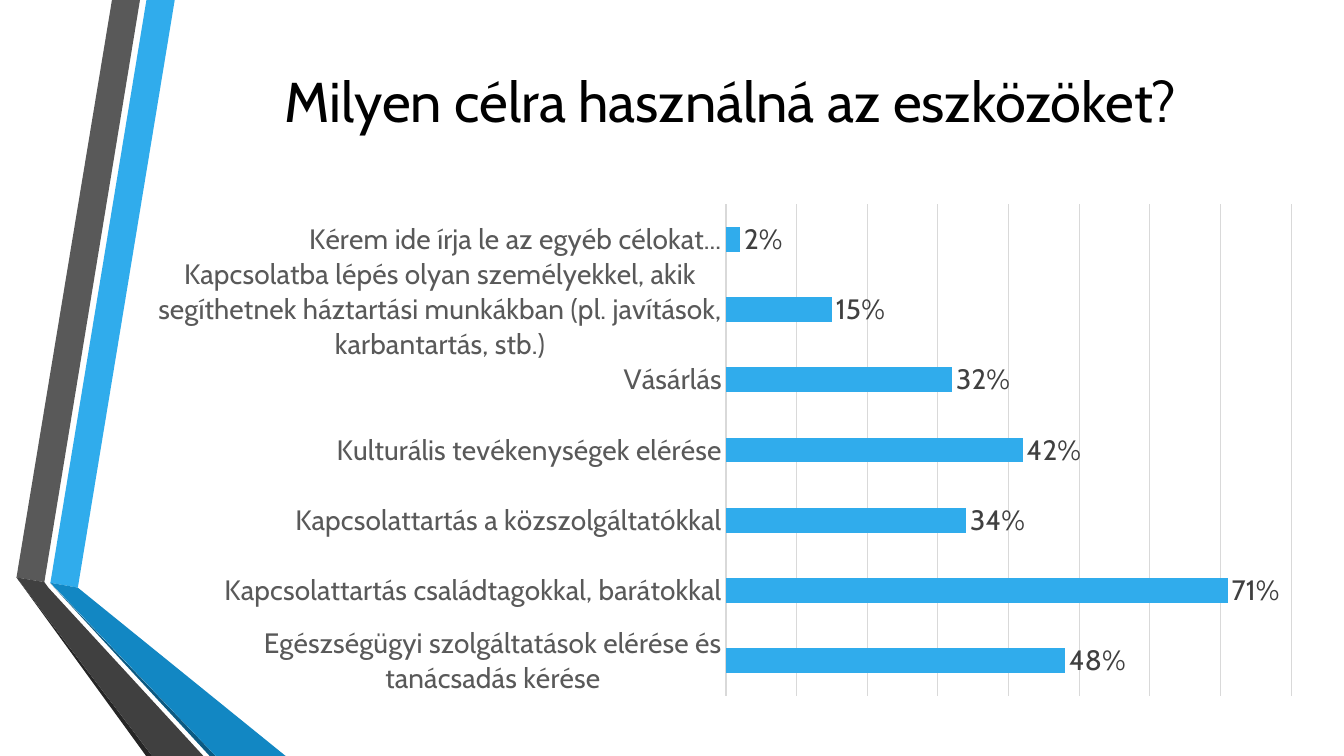
from lxml import etree
from pptx import Presentation
from pptx.chart.data import CategoryChartData as ChartData
from pptx.dml.color import RGBColor as Color
from pptx.enum.chart import XL_CHART_TYPE as ChartType
from pptx.enum.chart import XL_LABEL_POSITION as LabelPosition
from pptx.enum.chart import XL_TICK_LABEL_POSITION as TickLabels
from pptx.enum.chart import XL_TICK_MARK as TickMark
from pptx.enum.text import MSO_ANCHOR as Anchor
from pptx.enum.text import PP_ALIGN as Align
from pptx.oxml.ns import qn
from pptx.util import Pt

# Content
TITLE = "Milyen célra használná az eszközöket?"
PURPOSES = [
    ("Egészségügyi szolgáltatások elérése és tanácsadás kérése", 0.48),
    ("Kapcsolattartás családtagokkal, barátokkal", 0.71),
    ("Kapcsolattartás a közszolgáltatókkal", 0.34),
    ("Kulturális tevékenységek elérése", 0.42),
    ("Vásárlás", 0.32),
    ("Kapcsolatba lépés olyan személyekkel, akik segíthetnek háztartási "
     "munkákban (pl. javítások, karbantartás, stb.)", 0.15),
    ("Kérem ide írja le az egyéb célokat...", 0.02),
]


class Theme:
    font = "Cabin"
    title_size, label_size = Pt(40), Pt(20)
    title, axis_text, value_text = "000000", "595959", "404040"
    bar, grid = "30ACEC", "D9D9D9"
    ribbon_blue, ribbon_grey = "30ACEC", "595959"
    fold_blue, fold_grey = "1287C3", "404040"
    edge_blue, edge_grey = "0C5A82", "262626"


# Geometry in points
WIDTH, HEIGHT = 960, 540
TITLE_BOX = (127.4, 2, 789, 138.5)
CHART_BOX = (106.2, 88.6, 853.8, 444.2)
PLOT_AREA = {"x": 0.483, "y": 0.129, "w": 0.473, "h": 0.791}
RIBBONS = [
    (Theme.ribbon_blue, [(36, 416.3), (55.6, 419.8), (124.8, 0), (104.6, 0)]),
    (Theme.ribbon_grey, [(100, 0), (80, 0), (11.8, 412.5), (31.7, 415.8)]),
    (Theme.edge_grey, [(11.8, 412.5), (104.4, HEIGHT), (108.7, HEIGHT)]),
    (Theme.edge_blue, [(36, 416.7), (149.8, HEIGHT), (154.1, HEIGHT)]),
    (Theme.fold_blue, [(36, 416.3), (154.1, HEIGHT), (204, HEIGHT),
                       (55.6, 419.8)]),
    (Theme.fold_grey, [(145.3, HEIGHT), (34.6, 419.8), (31.7, 415.8),
                       (11.8, 412.5), (108.7, HEIGHT)]),
]


def style_font(font, size, color):
    font.name, font.size, font.bold = Theme.font, size, False
    font.color.rgb = Color.from_string(color)


def style_line(line):
    line.color.rgb = Color.from_string(Theme.grid)
    line.width = Pt(0.75)


def add_ribbon(page, color, points):
    corners = [(Pt(x), Pt(y)) for x, y in points]
    builder = page.shapes.build_freeform(*corners[0])
    builder.add_line_segments(corners[1:], close=True)
    ribbon = builder.convert_to_shape()
    ribbon.shadow.inherit = False
    ribbon.fill.solid()
    ribbon.fill.fore_color.rgb = Color.from_string(color)
    ribbon.line.fill.background()


def add_title(page):
    box = page.shapes.add_textbox(*map(Pt, TITLE_BOX))
    frame = box.text_frame
    frame.word_wrap = True
    frame.vertical_anchor = Anchor.MIDDLE
    frame.text = TITLE
    para = frame.paragraphs[0]
    para.alignment = Align.CENTER
    style_font(para.runs[0].font, Theme.title_size, Theme.title)


def place_plot(chart):
    """Fix the inner plot area as fractions of the chart."""
    plot_area = chart.plots[0]._element.getparent()
    for old in plot_area.findall(qn("c:layout")):
        plot_area.remove(old)
    layout = etree.Element(qn("c:layout"))
    manual = etree.SubElement(layout, qn("c:manualLayout"))
    settings = [("layoutTarget", "inner"), ("xMode", "edge"), ("yMode", "edge")]
    for name, value in settings + list(PLOT_AREA.items()):
        etree.SubElement(manual, qn("c:" + name)).set("val", str(value))
    plot_area.insert(0, layout)


def add_purpose_chart(page):
    data = ChartData(number_format="0%")
    data.categories = [purpose for purpose, share in PURPOSES]
    data.add_series("Series 1", [share for purpose, share in PURPOSES])
    chart = page.shapes.add_chart(
        ChartType.BAR_CLUSTERED, *map(Pt, CHART_BOX), data).chart
    chart.has_legend = chart.has_title = False
    style_font(chart.font, Theme.label_size, Theme.axis_text)
    place_plot(chart)

    # Axes
    purposes, shares = chart.category_axis, chart.value_axis
    purposes.major_tick_mark = purposes.minor_tick_mark = TickMark.NONE
    purposes.tick_label_position = TickLabels.NEXT_TO_AXIS
    style_font(purposes.tick_labels.font, Theme.label_size, Theme.axis_text)
    style_line(purposes.format.line)
    shares.minimum_scale, shares.maximum_scale = 0, 0.8
    shares.major_unit = 0.1
    shares.has_major_gridlines = True
    style_line(shares.major_gridlines.format.line)
    shares.visible = False

    # Bars and their values
    plot = chart.plots[0]
    plot.gap_width, plot.vary_by_categories = 182, False
    fill = plot.series[0].format.fill
    fill.solid()
    fill.fore_color.rgb = Color.from_string(Theme.bar)
    plot.has_data_labels = True
    labels = plot.data_labels
    labels.show_value = True
    labels.number_format, labels.number_format_is_linked = "0%", False
    labels.position = LabelPosition.OUTSIDE_END
    style_font(labels.font, Theme.label_size, Theme.value_text)


def main():
    deck = Presentation()
    deck.slide_width, deck.slide_height = Pt(WIDTH), Pt(HEIGHT)
    page = deck.slides.add_slide(deck.slide_layouts[6])
    for color, points in RIBBONS:
        add_ribbon(page, color, points)
    add_title(page)
    add_purpose_chart(page)
    deck.save("out.pptx")


if __name__ == "__main__":
    main()
